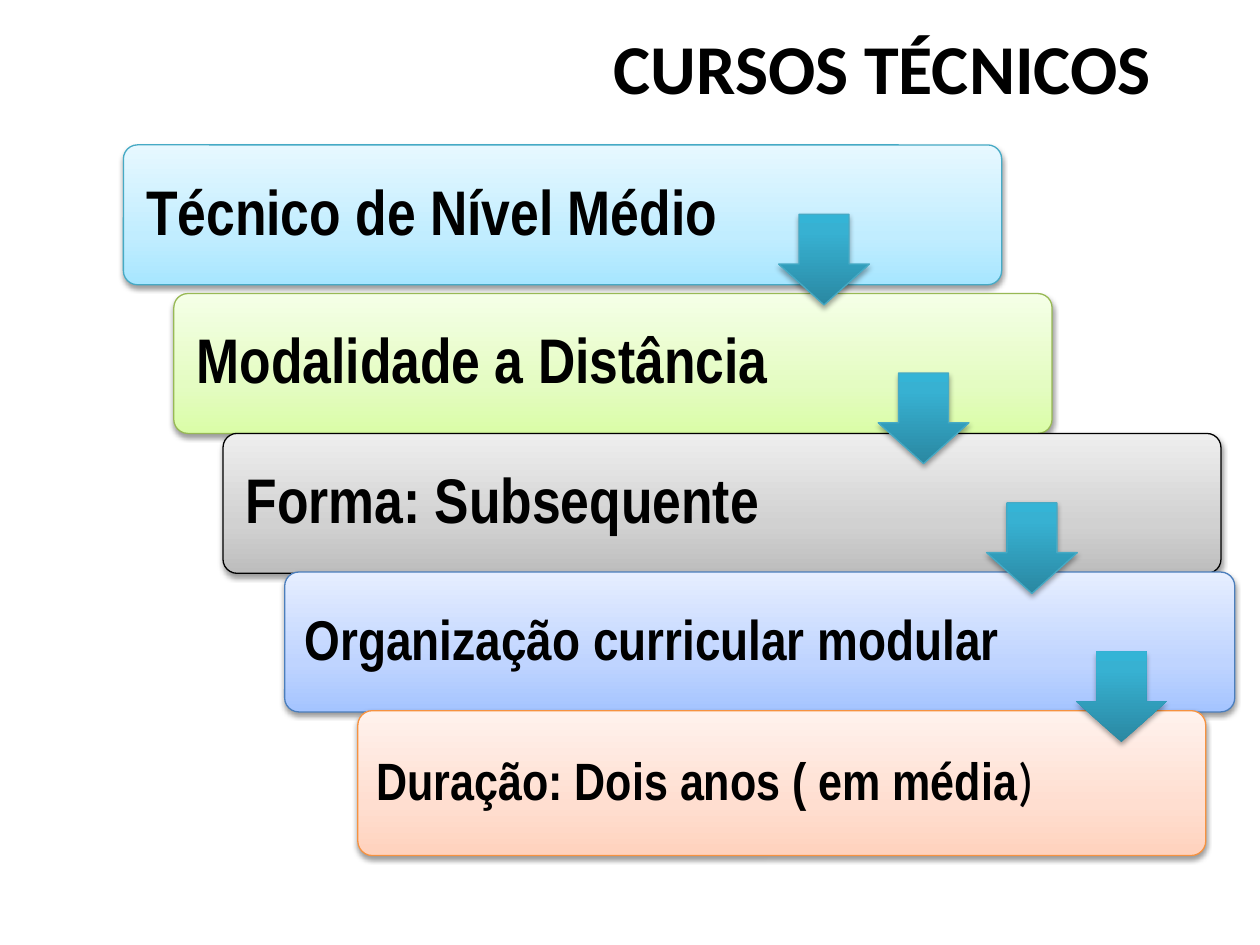
from lxml.etree import SubElement
from pptx import Presentation
from pptx.dml.color import RGBColor
from pptx.enum.shapes import MSO_SHAPE
from pptx.enum.text import MSO_ANCHOR, PP_ALIGN
from pptx.oxml.ns import qn
from pptx.util import Inches, Pt

BLACK = RGBColor(0, 0, 0)
TEAL = RGBColor(0x46, 0xAA, 0xC5)
GREEN = RGBColor(0x98, 0xB9, 0x55)
BLUE = RGBColor(0x4B, 0x7E, 0xBC)
ORANGE = RGBColor(0xF6, 0x92, 0x40)
NARROW, SANS = "Arial Narrow", "Calibri"

# Steps: runs, size, left, top, width, height, text width, inset, line, gradient
STEPS = [
    ([("Técnico de Nível Médio", NARROW, True)], 36,
     0.98, 1.15, 6.97, 1.11, 5.65, 0.15, TEAL, ("A7E6FF", "C1EDFF", "E7F8FF")),
    ([("Modalidade a Distância", NARROW, True)], 36,
     1.38, 2.33, 6.97, 1.11, 5.67, 0.15, GREEN, ("DAFDA7", "E4FCC2", "F5FFE7")),
    ([("Forma: Subsequente", NARROW, True)], 36,
     1.77, 3.44, 7.92, 1.11, 6.44, 0.15, BLACK, ("BDBDBD", "D1D1D1", "EEEEEE")),
    ([("Organização curricular modular", NARROW, True)], 32,
     2.26, 4.54, 7.54, 1.11, 6.14, 0.13, BLUE, ("A4C4FF", "BFD4FF", "E6EEFF")),
    ([("Duração: Dois anos ( em média", NARROW, True), (")", SANS, False)], 30,
     2.84, 5.64, 6.73, 1.15, 5.47, 0.12, ORANGE, ("FFD2BD", "FFDED0", "FFF2ED")),
]
# Arrows: left, top, line
ARROWS = [(6.18, 1.7, TEAL), (6.97, 2.96, TEAL), (7.83, 3.99, TEAL), (8.54, 5.17, None)]
ARROW_TONES = ("2A88A2", "37B1D2", "34B4D6")
ARROW_SIZE = 0.72
PAD = 0.03

prs = Presentation()
prs.slide_width, prs.slide_height = Inches(10), Inches(7.5)
slide = prs.slides.add_slide(prs.slide_layouts[6])


def add_text(runs, box, size, inset=0.1, align=PP_ALIGN.LEFT, space=1.0):
    frame = slide.shapes.add_textbox(*map(Inches, box)).text_frame
    frame.word_wrap = True
    frame.vertical_anchor = MSO_ANCHOR.MIDDLE
    frame.margin_left = frame.margin_right = Inches(inset)
    frame.margin_top = frame.margin_bottom = Inches(inset)
    para = frame.paragraphs[0]
    para.alignment, para.line_spacing = align, space
    for text, face, bold in runs:
        run = para.add_run()
        run.text = text
        font = run.font
        font.name, font.size, font.bold = face, Pt(size), bold
        font.color.rgb = BLACK


def add_color(parent, tone):
    return SubElement(parent, qn("a:srgbClr"), val=tone)


def set_fill(shape, tones, mid):
    """Three-stop gradient running from bottom to top."""
    shape.fill.background()
    props = shape.fill._xPr
    grad = props.makeelement(qn("a:gradFill"), {"rotWithShape": "1"})
    props.replace(props.find(qn("a:noFill")), grad)
    stops = SubElement(grad, qn("a:gsLst"))
    for pos, tone in zip((0, mid, 100), tones):
        add_color(SubElement(stops, qn("a:gs"), pos=str(pos * 1000)), tone)
    SubElement(grad, qn("a:lin"), ang="16200000", scaled="0")


def set_shadow(shape, drop, alpha):
    shape.shadow.inherit = False
    effects = shape._element.spPr.find(qn("a:effectLst"))
    outer = SubElement(effects, qn("a:outerShdw"), blurRad=str(Pt(3.1)),
                       dist=str(Pt(drop)), dir="5400000", rotWithShape="0")
    SubElement(add_color(outer, "000000"), qn("a:alpha"), val=str(alpha * 1000))


def add_block(kind, box, adjust, tones, mid, line, drop, alpha):
    shape = slide.shapes.add_shape(kind, *map(Inches, box))
    for i, value in enumerate(adjust):
        shape.adjustments[i] = value
    set_fill(shape, tones, mid)
    if line is None:
        shape.line.fill.background()
    else:
        shape.line.color.rgb = line
        shape.line.width = Pt(0.75)
    set_shadow(shape, drop, alpha)


# Title
add_text([("CURSOS TÉCNICOS", SANS, True)], (0.75, 0.13, 8.48, 0.79), 40,
         inset=0.1, align=PP_ALIGN.RIGHT)

# Staggered steps
for runs, size, x, y, w, h, wide, inset, line, tones in STEPS:
    add_block(MSO_SHAPE.ROUNDED_RECTANGLE, (x, y, w, h), [0.1], tones, 35, line, 1.6, 38)
    add_text(runs, (x + PAD, y + PAD, wide, h - 2 * PAD), size, inset=inset, space=0.9)

# Arrows from step to step
for x, y, line in ARROWS:
    add_block(MSO_SHAPE.DOWN_ARROW, (x, y, ARROW_SIZE, ARROW_SIZE), [0.55, 0.45],
              ARROW_TONES, 80, line, 1.8, 35)

prs.save("out.pptx")
